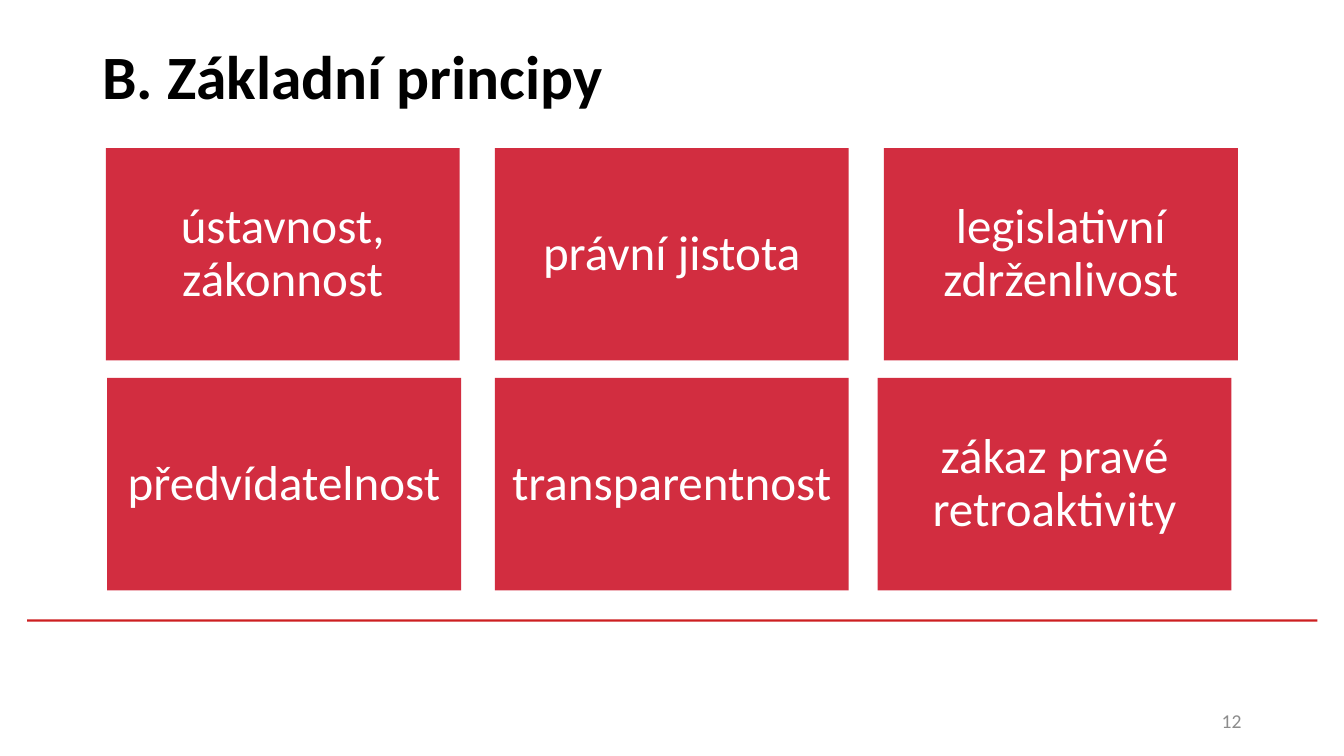
"""Builds the slide on the basic principles as a grid of six red tiles."""
from dataclasses import dataclass

import pptx
import pptx.dml.color
import pptx.enum.shapes
import pptx.enum.text
import pptx.util

Pt = pptx.util.Pt
Align = pptx.enum.text.PP_ALIGN


@dataclass(frozen=True)
class Theme:
    font: str = "Calibri"
    black: str = "000000"
    white: str = "FFFFFF"
    grey: str = "8C8C8C"
    tile: str = "D22D40"
    rule: str = "CD1F21"
    title_size: float = 44
    tile_size: float = 35
    number_size: float = 14


def write_text(frame, text, *, font, size, color, bold=False,
               align=Align.LEFT, line_spacing=1.0, inset=None):
    frame.word_wrap = True
    frame.auto_size = pptx.enum.text.MSO_AUTO_SIZE.NONE
    frame.vertical_anchor = pptx.enum.text.MSO_ANCHOR.MIDDLE
    if inset is not None:
        frame.margin_left = frame.margin_right = Pt(inset)
        frame.margin_top = frame.margin_bottom = Pt(inset)
    paragraph = frame.paragraphs[0]
    paragraph.alignment = align
    paragraph.line_spacing = line_spacing
    run = paragraph.add_run()
    run.text = text
    run.font.name = font
    run.font.size = Pt(size)
    run.font.bold = bold
    run.font.color.rgb = pptx.dml.color.RGBColor.from_string(color)


class SlideBuilder:
    def __init__(self, slide, theme):
        self.slide = slide
        self.theme = theme

    def title(self, text, left, top, width, height):
        shape = self.slide.shapes.title
        shape.left, shape.top = Pt(left), Pt(top)
        shape.width, shape.height = Pt(width), Pt(height)
        write_text(shape.text_frame, text, font=self.theme.font,
                   size=self.theme.title_size, color=self.theme.black, bold=True)

    def rectangle(self, left, top, width, height, color):
        shape = self.slide.shapes.add_shape(
            pptx.enum.shapes.MSO_SHAPE.RECTANGLE,
            Pt(left), Pt(top), Pt(width), Pt(height))
        shape.shadow.inherit = False
        shape.fill.solid()
        shape.fill.fore_color.rgb = pptx.dml.color.RGBColor.from_string(color)
        shape.line.fill.background()
        return shape

    def tile(self, text, left, top, width, height):
        shape = self.rectangle(left, top, width, height, self.theme.tile)
        write_text(shape.text_frame, text, font=self.theme.font,
                   size=self.theme.tile_size, color=self.theme.white,
                   align=Align.CENTER, line_spacing=0.9, inset=10.5)

    def slide_number(self, text, left, top, width, height):
        shape = self.slide.shapes.add_textbox(Pt(left), Pt(top), Pt(width), Pt(height))
        write_text(shape.text_frame, text, font=self.theme.font,
                   size=self.theme.number_size, color=self.theme.grey,
                   align=Align.RIGHT)


def main():
    presentation = pptx.Presentation()
    presentation.slide_width, presentation.slide_height = Pt(960), Pt(540)
    slide = presentation.slides.add_slide(presentation.slide_layouts[5])
    theme = Theme()
    builder = SlideBuilder(slide, theme)

    builder.rectangle(19.4, 442.5, 921.6, 1.5, theme.rule)
    builder.title("B. Základní principy", 66, 1.5, 828, 104.4)
    builder.slide_number("12", 678, 500.5, 216, 28.8)

    tile_width, tile_height = 252.8, 151.7
    principle_rows = [
        (105.8, [(75.6, "ústavnost, zákonnost"),
                 (353.5, "právní jistota"),
                 (631.4, "legislativní zdrženlivost")]),
        (270, [(76.6, "předvídatelnost"),
               (353.5, "transparentnost"),
               (626.9, "zákaz pravé retroaktivity")]),
    ]
    for top, principles in principle_rows:
        for left, principle in principles:
            builder.tile(principle, left, top, tile_width, tile_height)

    presentation.save("out.pptx")


if __name__ == "__main__":
    main()
